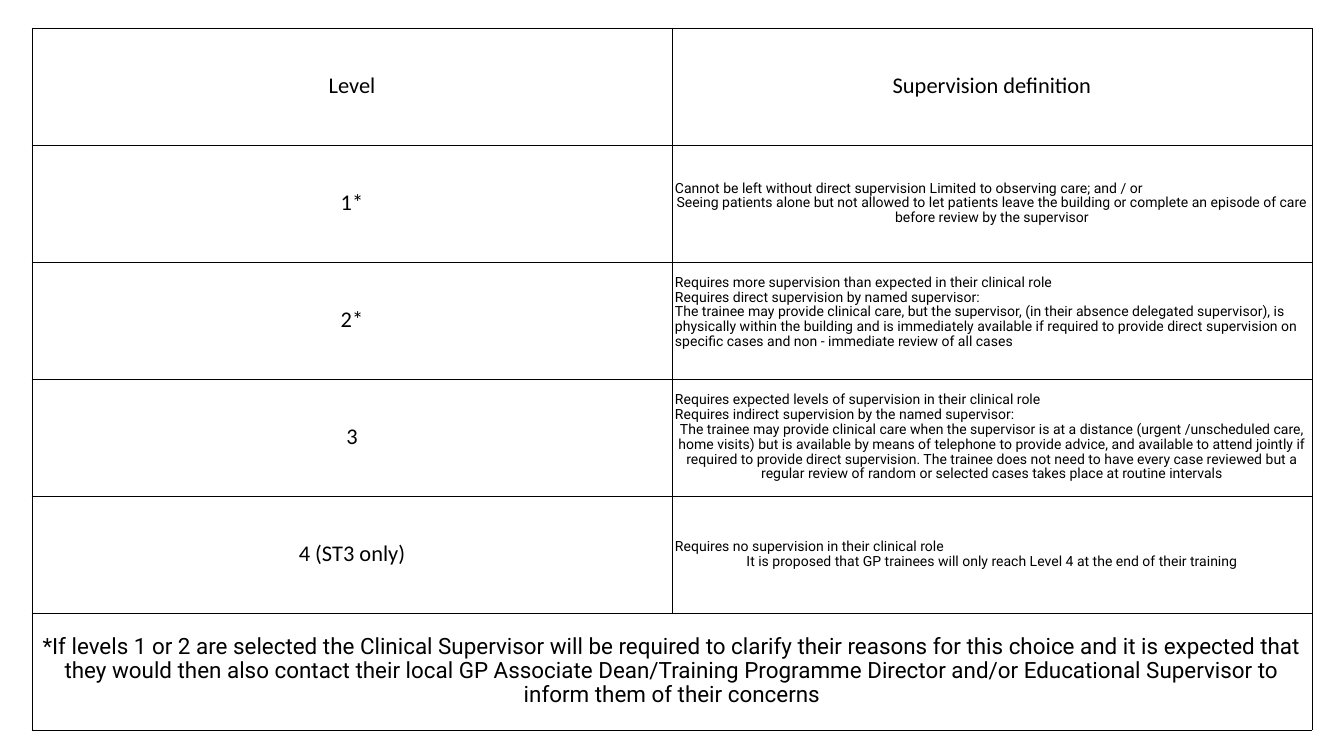
import pptx
import pptx.dml.color
import pptx.enum.text
import pptx.oxml
import pptx.oxml.ns
import pptx.util

PX = 18143  # EMU in one px
BLACK = pptx.dml.color.RGBColor(0, 0, 0)
LEFT = pptx.enum.text.PP_ALIGN.LEFT
MID = pptx.enum.text.PP_ALIGN.CENTER
INSET = 3
LINE = 16  # height of one line of small text

# Level, left-aligned lines, centred closing line, room below the text
LEVELS = [
    ("1*",
     ["Cannot be left without direct supervision Limited to observing care; and / or"],
     "Seeing patients alone but not allowed to let patients leave the building or "
     "complete an episode of care before review by the supervisor", 0),
    ("2*",
     ["Requires more supervision than expected in their clinical role",
      "Requires direct supervision by named supervisor:",
      "The trainee may provide clinical care, but the supervisor, (in their absence "
      "delegated supervisor), is physically within the building and is immediately "
      "available if required to provide direct supervision on specific cases and "
      "non - immediate review of all cases"],
     "", LINE),
    ("3",
     ["Requires expected levels of supervision in their clinical role",
      "Requires indirect supervision by the named supervisor:"],
     "The trainee may provide clinical care when the supervisor is at a distance "
     "(urgent /unscheduled care, home visits) but is available by means of telephone "
     "to provide advice, and available to attend jointly if required to provide direct "
     "supervision. The trainee does not need to have every case reviewed but a regular "
     "review of random or selected cases takes place at routine intervals", 0),
    ("4 (ST3 only)",
     ["Requires no supervision in their clinical role"],
     "It is proposed that GP trainees will only reach Level 4 at the end of their "
     "training", 0),
]
NOTE = ("*If levels 1 or 2 are selected the Clinical Supervisor will be required to "
        "clarify their reasons for this choice and it is expected that they would then "
        "also contact their local GP Associate Dean/Training Programme Director and/or "
        "Educational Supervisor to inform them of their concerns")


def px(n):
    return pptx.util.Emu(n * PX)


def write(par, text, size=32, font="Calibri", align=MID):
    """Put formatted text into a paragraph."""
    par.alignment = align
    par.line_spacing = 0.9
    run = par.add_run()
    run.text = text
    run.font.size = pptx.util.Pt(size)
    run.font.name = font
    run.font.color.rgb = BLACK


def style(cell):
    """Clear the fill, set the insets and draw the four borders."""
    cell.fill.background()
    cell.vertical_anchor = pptx.enum.text.MSO_ANCHOR.MIDDLE
    cell.margin_left = cell.margin_right = px(INSET)
    cell.margin_top = cell.margin_bottom = px(INSET)
    props = cell._tc.get_or_add_tcPr()
    for i, side in enumerate("LRTB"):
        props.insert(i, pptx.oxml.parse_xml(
            f'<a:ln{side} {pptx.oxml.ns.nsdecls("a")} w="12700"><a:solidFill>'
            f'<a:srgbClr val="{BLACK}"/></a:solidFill></a:ln{side}>'))


def define(cell, lines, last, room):
    """Fill a definition cell, one paragraph to a line."""
    rows = [(line, LEFT) for line in lines]
    if last:
        rows.append((last, MID))
    frame = cell.text_frame
    for i, (text, align) in enumerate(rows):
        par = frame.add_paragraph() if i else frame.paragraphs[0]
        write(par, text, size=20, font="Roboto", align=align)
    cell.margin_bottom = px(INSET + room)


def add_grid(slide, rows, cols, left, top, wide, high):
    """Add a plain table with equal rows and columns."""
    grid = slide.shapes.add_table(
        rows, cols, px(left), px(top), px(wide * cols), px(high * rows)).table
    grid.first_row = grid.horz_banding = False
    for col in grid.columns:
        col.width = px(wide)
    for row in grid.rows:
        row.height = px(high)
    for cell in grid.iter_cells():
        style(cell)
    return grid


def main():
    deck = pptx.Presentation()
    deck.slide_width, deck.slide_height = px(1344), px(756)
    slide = deck.slides.add_slide(deck.slide_layouts[6])
    grid = add_grid(slide, len(LEVELS) + 2, 2, 32, 28, 640, 117)

    # Header
    for col, text in enumerate(["Level", "Supervision definition"]):
        write(grid.cell(0, col).text_frame.paragraphs[0], text)

    # Levels
    for row, (level, lines, last, room) in enumerate(LEVELS, 1):
        write(grid.cell(row, 0).text_frame.paragraphs[0], level)
        define(grid.cell(row, 1), lines, last, room)

    # Note across the foot
    end = len(LEVELS) + 1
    foot = grid.cell(end, 0)
    foot.merge(grid.cell(end, 1))
    write(foot.text_frame.paragraphs[0], NOTE, font="Roboto")

    deck.save("out.pptx")


if __name__ == "__main__":
    main()
